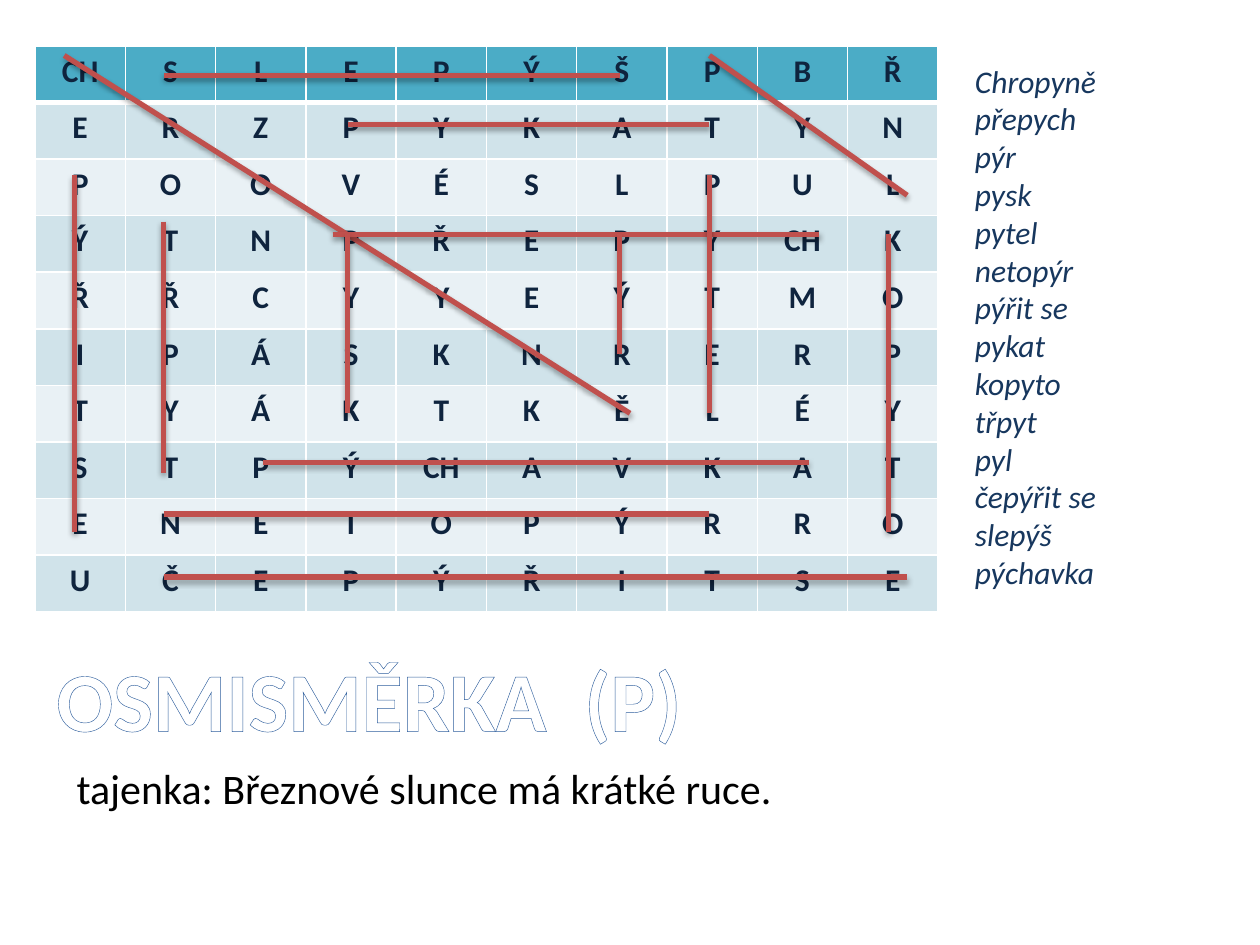
from lxml import etree
from pptx import Presentation
from pptx.dml.color import RGBColor
from pptx.enum.shapes import MSO_CONNECTOR
from pptx.enum.text import MSO_AUTO_SIZE, PP_ALIGN
from pptx.oxml import parse_xml
from pptx.oxml.ns import nsdecls
from pptx.util import Pt

STRAIGHT = MSO_CONNECTOR.STRAIGHT
CENTER = PP_ALIGN.CENTER
FIT_SHAPE = MSO_AUTO_SIZE.SHAPE_TO_FIT_TEXT

WHITE = RGBColor(0xFF, 0xFF, 0xFF)
BLACK = RGBColor(0x00, 0x00, 0x00)
NAVY = RGBColor(0x17, 0x37, 0x5E)
LETTER_INK = RGBColor(0x0F, 0x24, 0x3E)
HEADER_FILL = RGBColor(0x4B, 0xAC, 0xC6)
BAND_FILLS = (RGBColor(0xE9, 0xF1, 0xF5), RGBColor(0xD0, 0xE3, 0xEA))
STRIKE_RED = RGBColor(0xC0, 0x50, 0x4D)
OUTLINE_STOPS = (
    (0, RGBColor(0x7E, 0xA6, 0xEA)),
    (75000, RGBColor(0x2F, 0x5F, 0x9E)),
    (100000, RGBColor(0x24, 0x4E, 0x85)),
)
FONT = "Calibri"

TITLE = "OSMISMĚRKA  (P)"
SOLUTION = "tajenka: Březnové slunce má krátké ruce."
WORDS = [
    "Chropyně", "přepych", "pýr", "pysk", "pytel", "netopýr", "pýřit se",
    "pykat", "kopyto", "třpyt", "pyl", "čepýřit se", "slepýš", "pýchavka",
]
LETTERS = [row.split() for row in (
    "CH S L E P Ý Š P B Ř",
    "E R Z P Y K A T Y N",
    "P O O V É S L P U L",
    "Ý T N P Ř E P Y CH K",
    "Ř Ř C Y Y E Ý T M O",
    "I P Á S K N R E R P",
    "T Y Á K T K Ě L É Y",
    "S T P Ý CH A V K A T",
    "E N E T O P Ý R R O",
    "U Č E P Ý Ř I T S E",
)]
STRIKES = [
    (36.7, 31.7, 360, 236.2),
    (190.1, 133.9, 468, 133.9),
    (354.2, 133.9, 354.2, 202.3),
    (198.7, 133.9, 198.7, 236.2),
    (405.4, 100.1, 405.4, 236.2),
    (93.6, 293.8, 405.4, 293.8),
    (93.6, 329.8, 518.4, 329.8),
    (42.5, 100.1, 42.5, 303.8),
    (198.7, 71.3, 405.4, 71.3),
    (507.6, 133.9, 507.6, 303.8),
    (93.6, 126.7, 93.6, 270),
    (405.4, 31.7, 518.4, 111.6),
    (93.6, 43.2, 354.2, 43.2),
    (150.5, 264.2, 462.2, 264.2),
]
GRID_LEFT, GRID_TOP = 20, 26.2
COLUMN_WIDTH, ROW_HEIGHT = 51.6, 32.35


def add_run(paragraph, text, size, color, bold=False, italic=False):
    run = paragraph.add_run()
    run.text = text
    font = run.font
    font.name, font.size = FONT, Pt(size)
    font.bold, font.italic = bold, italic
    font.color.rgb = color
    return run


def add_text(slide, box, lines, size, color, **style):
    shape = slide.shapes.add_textbox(*map(Pt, box))
    frame = shape.text_frame
    frame.word_wrap = True
    frame.auto_size = FIT_SHAPE
    for index, line in enumerate(lines):
        paragraph = frame.paragraphs[0] if index == 0 else frame.add_paragraph()
        run = add_run(paragraph, line, size, color, **style)
    return run


def outline_run(run, width):
    stops = "".join(
        f'<a:gs pos="{position}"><a:srgbClr val="{color}"/></a:gs>'
        for position, color in OUTLINE_STOPS
    )
    run.font.fill.solid()
    run.font.fill.fore_color.rgb = WHITE
    run.font._element.insert(0, parse_xml(
        f'<a:ln {nsdecls("a")} w="{Pt(width)}"><a:gradFill><a:gsLst>{stops}</a:gsLst>'
        '<a:lin ang="5400000"/></a:gradFill></a:ln>'
    ))


def set_borders(cell, widths):
    properties = cell._tc.get_or_add_tcPr()
    for index, (side, width) in enumerate(zip("LRTB", widths)):
        properties.insert(index, parse_xml(
            f'<a:ln{side} {nsdecls("a")} w="{Pt(width)}"><a:solidFill>'
            f'<a:srgbClr val="{WHITE}"/></a:solidFill></a:ln{side}>'
        ))


def add_letter_grid(slide):
    rows, columns = len(LETTERS), len(LETTERS[0])
    table = slide.shapes.add_table(
        rows, columns, Pt(GRID_LEFT), Pt(GRID_TOP),
        Pt(columns * COLUMN_WIDTH), Pt(rows * ROW_HEIGHT),
    ).table
    for column in table.columns:
        column.width = Pt(COLUMN_WIDTH)
    for row_index, letters in enumerate(LETTERS):
        table.rows[row_index].height = Pt(ROW_HEIGHT)
        fill = BAND_FILLS[row_index % 2] if row_index else HEADER_FILL
        top = 3 if row_index == 1 else 1
        bottom = 3 if row_index == 0 else 1
        for column_index, letter in enumerate(letters):
            cell = table.cell(row_index, column_index)
            cell.fill.solid()
            cell.fill.fore_color.rgb = fill
            set_borders(cell, (1, 1, top, bottom))
            paragraph = cell.text_frame.paragraphs[0]
            paragraph.alignment = CENTER
            add_run(paragraph, letter, 18, LETTER_INK, bold=True)


def add_strike(slide, ends):
    connector = slide.shapes.add_connector(STRAIGHT, *map(Pt, ends))
    connector.line.color.rgb = STRIKE_RED
    connector.line.width = Pt(3)
    connector._element.spPr.append(etree.fromstring(
        f'<a:effectLst {nsdecls("a")}><a:outerShdw blurRad="{Pt(3.1)}" '
        f'dist="{Pt(1.8)}" dir="5400000" rotWithShape="0"><a:srgbClr val="{BLACK}">'
        '<a:alpha val="35000"/></a:srgbClr></a:outerShdw></a:effectLst>'
    ))


def main():
    presentation = Presentation()
    presentation.slide_width, presentation.slide_height = Pt(720), Pt(540)
    slide = presentation.slides.add_slide(presentation.slide_layouts[6])

    title = add_text(slide, (25.2, 366.5, 623.5, 65.5), [TITLE], 48, WHITE, bold=True)
    outline_run(title, 2.48)
    add_letter_grid(slide)
    add_text(slide, (550, 31.7, 147.6, 312.5), WORDS, 18, NAVY, italic=True)
    add_text(slide, (36.7, 432, 660.2, 36), [SOLUTION], 24, BLACK)
    for ends in STRIKES:
        add_strike(slide, ends)

    presentation.save("out.pptx")


if __name__ == "__main__":
    main()
